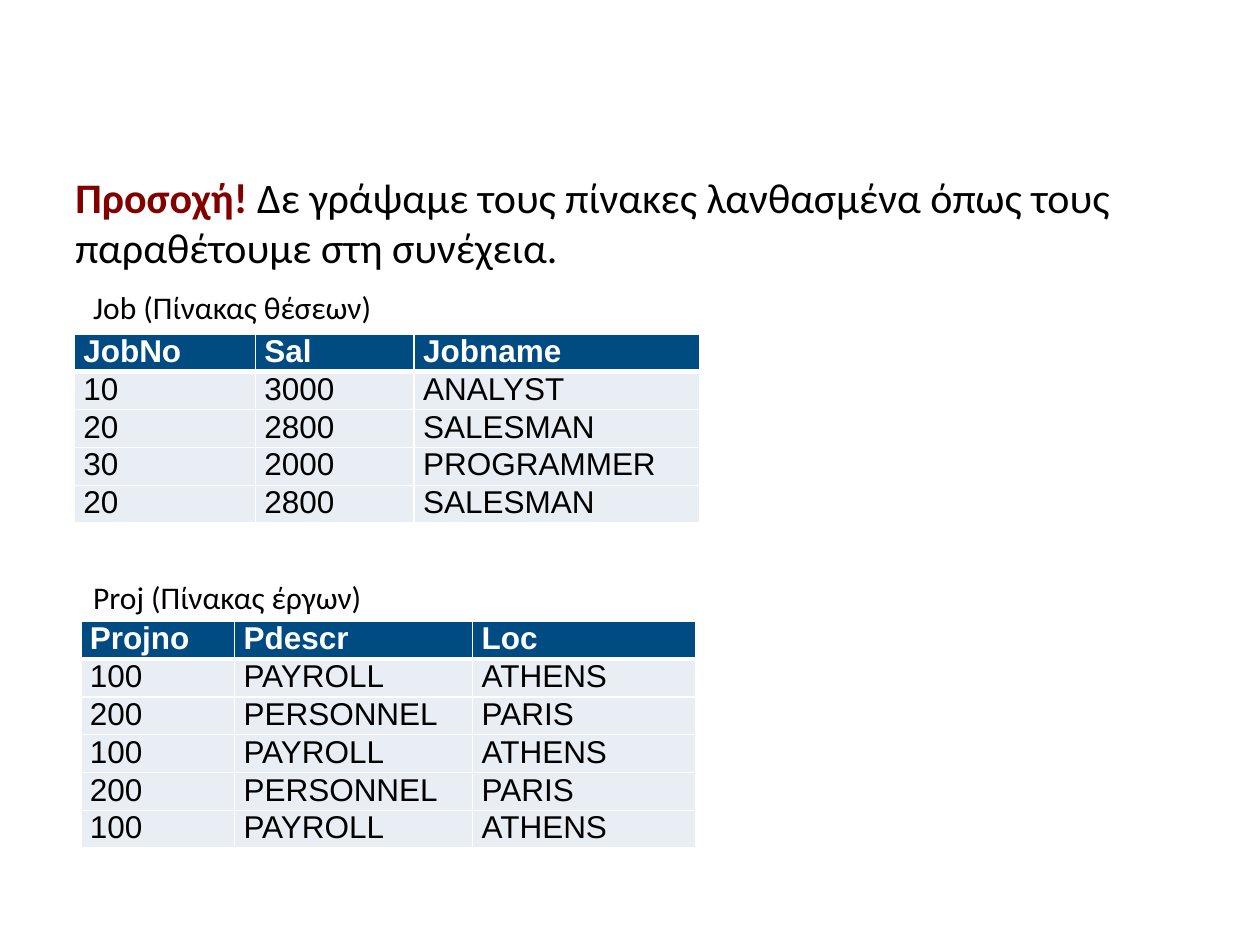
from pptx import Presentation
from pptx import util as u
from pptx.dml.color import RGBColor
from pptx.enum import text as t
from pptx.oxml import parse_xml
from pptx.oxml.ns import nsdecls

NAVY, PALE, WHITE, BLACK, MAROON = "004B82", "E9EDF4", "FFFFFF", "000000", "820000"
ROW_HEIGHT = 0.71


def colour(value):
    return RGBColor.from_string(value)


def add_text(paragraph, words, size=18, font="Calibri", fill=BLACK, bold=False):
    run = paragraph.add_run()
    run.text = words
    run.font.size = u.Pt(size)
    run.font.name = font
    run.font.bold = bold
    run.font.color.rgb = colour(fill)


def add_box(slide, left, top, width, height, wrap=True):
    shape = slide.shapes.add_textbox(*map(u.Cm, (left, top, width, height)))
    frame = shape.text_frame
    frame.word_wrap = wrap
    frame.vertical_anchor = t.MSO_ANCHOR.TOP
    if not wrap:
        frame.auto_size = t.MSO_AUTO_SIZE.SHAPE_TO_FIT_TEXT
    return frame.paragraphs[0]


def set_borders(cell, bottom):
    properties = cell._tc.get_or_add_tcPr()
    widths = {"lnL": 1, "lnR": 1, "lnT": 1, "lnB": bottom}
    # Border lines come before the fill in the cell properties
    for position, (side, width) in enumerate(widths.items()):
        properties.insert(position, parse_xml(
            f'<a:{side} {nsdecls("a")} w="{u.Pt(width)}"><a:solidFill>'
            f'<a:srgbClr val="{WHITE}"/></a:solidFill></a:{side}>'))


def add_warning(slide, left, top, width, height):
    paragraph = add_box(slide, left, top, width, height)
    add_text(paragraph, "Προσοχή! ", size=24, fill=MAROON, bold=True)
    add_text(paragraph, "Δε γράψαμε τους πίνακες λανθασμένα όπως τους "
             "παραθέτουμε στη συνέχεια.", size=24)


def add_caption(slide, words, left, top, width):
    add_text(add_box(slide, left, top, width, 1.02, wrap=False), words)


def add_data_table(slide, rows, left, top, column_widths):
    table = slide.shapes.add_table(
        len(rows), len(column_widths), u.Cm(left), u.Cm(top),
        u.Cm(sum(column_widths)), u.Cm(ROW_HEIGHT * len(rows))).table
    for column, width in zip(table.columns, column_widths):
        column.width = u.Cm(width)
    for row_index, row in enumerate(rows):
        header = row_index == 0
        table.rows[row_index].height = u.Cm(ROW_HEIGHT)
        for column_index, words in enumerate(row):
            cell = table.cell(row_index, column_index)
            cell.margin_left = cell.margin_right = u.Cm(0.18)
            cell.margin_top = cell.margin_bottom = 0
            cell.fill.solid()
            cell.fill.fore_color.rgb = colour(NAVY if header else PALE)
            # A heavier rule separates the header from the data
            set_borders(cell, 3 if row_index == 0 else 1)
            add_text(cell.text_frame.paragraphs[0], words, font="Arial",
                     fill=WHITE if header else BLACK, bold=header)


def main():
    presentation = Presentation()
    presentation.slide_width, presentation.slide_height = u.Cm(25.4), u.Cm(19.05)
    slide = presentation.slides.add_slide(presentation.slide_layouts[6])

    add_warning(slide, 1.27, 3.33, 22.86, 2.59)

    # Jobs
    jobs = [("JobNo", "Sal", "Jobname"),
            ("10", "3000", "ANALYST"),
            ("20", "2800", "SALESMAN"),
            ("30", "2000", "PROGRAMMER"),
            ("20", "2800", "SALESMAN")]
    add_data_table(slide, jobs, 1.5, 6.73, (3.65, 3.2, 5.76))
    add_caption(slide, "Job (Πίνακας θέσεων)", 1.63, 5.69, 6.2)

    # Projects: two records that alternate
    payroll = ("100", "PAYROLL", "ATHENS")
    personnel = ("200", "PERSONNEL", "PARIS")
    projects = [("Projno", "Pdescr", "Loc"),
                payroll, personnel, payroll, personnel, payroll]
    add_data_table(slide, projects, 1.63, 12.52, (3.1, 4.8, 4.5))
    add_caption(slide, "Proj (Πίνακας έργων)", 1.63, 11.53, 5.99)

    presentation.save("out.pptx")


if __name__ == "__main__":
    main()
